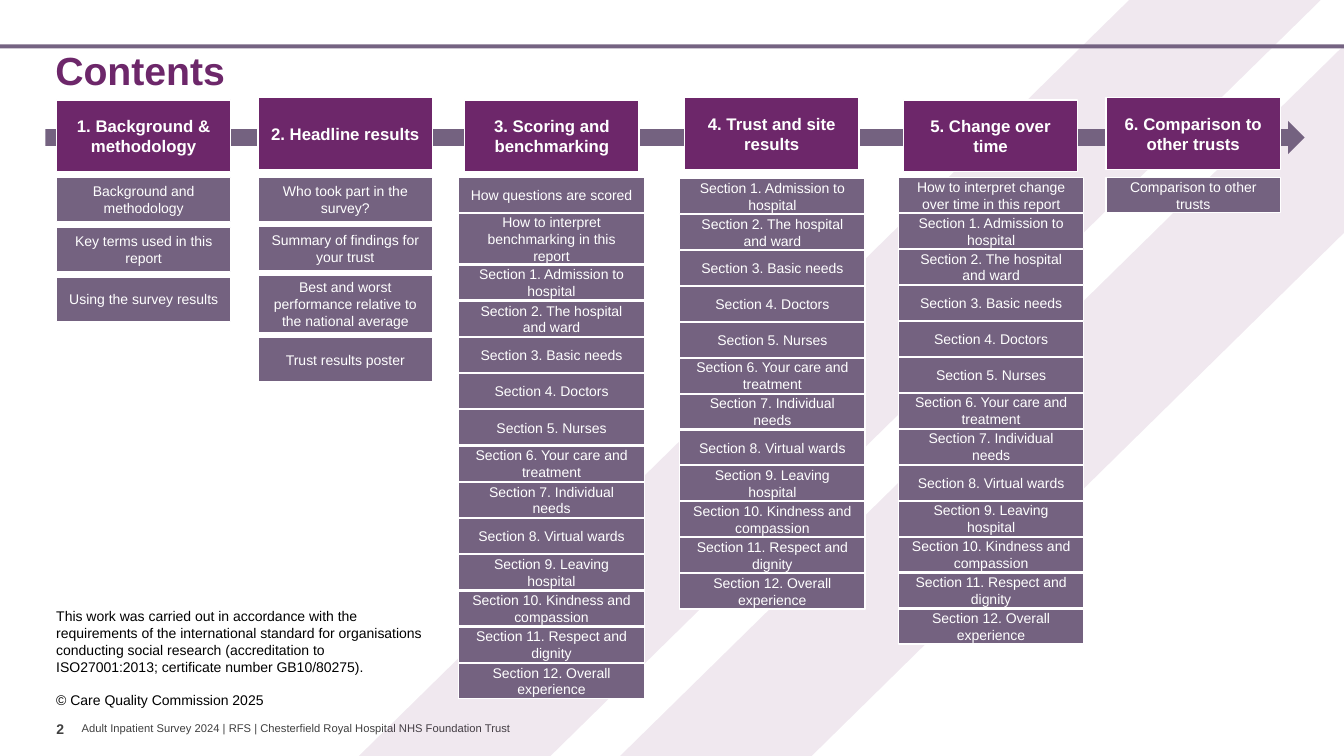
from dataclasses import dataclass

from lxml import etree
from pptx import Presentation
from pptx.dml.color import RGBColor
from pptx.enum.shapes import MSO_SHAPE
from pptx.enum.text import MSO_ANCHOR, PP_ALIGN
from pptx.oxml.ns import qn
from pptx.util import Inches, Pt

RECTANGLE = MSO_SHAPE.RECTANGLE
RIGHT_ARROW = MSO_SHAPE.RIGHT_ARROW
TOP, MIDDLE = MSO_ANCHOR.TOP, MSO_ANCHOR.MIDDLE
LEFT, CENTER = PP_ALIGN.LEFT, PP_ALIGN.CENTER

COLUMNS, ROWS = 133.3, 75
CELL = Inches(0.1)
INSETS = (1, 0.5)


@dataclass(frozen=True)
class Theme:
    font: str = "Arial"
    plum: str = "6D276A"
    mauve: str = "746280"
    rule: str = "756382"
    white: str = "FFFFFF"
    black: str = "000000"
    grey: str = "404040"
    title_size: float = 28
    heading_size: float = 12
    body_size: float = 10
    footer_size: float = 8
    outline: float = 1
    band_opacity: int = 10


def grid(*cells):
    return [round(cell * CELL) for cell in cells]


def write(frame, text, *, font, size, color, bold=False, align=LEFT, anchor=TOP,
          insets=INSETS, wrap=True, line_spacing=None, gap=0):
    frame.word_wrap = wrap
    frame.vertical_anchor = anchor
    frame.margin_left, frame.margin_top = grid(*insets)
    frame.margin_right, frame.margin_bottom = grid(*insets)
    for index, wording in enumerate(text.split("\n")):
        paragraph = frame.add_paragraph() if index else frame.paragraphs[0]
        paragraph.alignment = align
        if line_spacing:
            paragraph.line_spacing = line_spacing
        if index:
            paragraph.space_before = Pt(gap)
        run = paragraph.add_run()
        run.text = wording
        run.font.name = font
        run.font.size = Pt(size)
        run.font.bold = bold
        run.font.color.rgb = RGBColor.from_string(color)


class ContentsSlide:
    def __init__(self, slide, theme):
        self.slide = slide
        self.theme = theme

    def paint(self, shape, color, outlined=False):
        shape.shadow.inherit = False
        shape.fill.solid()
        shape.fill.fore_color.rgb = RGBColor.from_string(color)
        if outlined:
            shape.line.color.rgb = RGBColor.from_string(self.theme.white)
            shape.line.width = Pt(self.theme.outline)
        else:
            shape.line.fill.background()
        return shape

    def block(self, kind, place, color, outlined=False):
        shape = self.slide.shapes.add_shape(kind, *grid(*place))
        return self.paint(shape, color, outlined)

    def band(self, corners):
        start, *others = [grid(*corner) for corner in corners]
        outline = self.slide.shapes.build_freeform(*start)
        outline.add_line_segments(others, close=True)
        band = self.paint(outline.convert_to_shape(), self.theme.plum)
        tint = band.fill._xPr.find(qn("a:solidFill"))[0]
        opacity = etree.SubElement(tint, qn("a:alpha"))
        opacity.set("val", str(self.theme.band_opacity * 1000))

    def label(self, text, place, **style):
        label = self.slide.shapes.add_textbox(*grid(*place))
        write(label.text_frame, text, font=self.theme.font, **style)

    def card(self, text, place, color, size, bold=False):
        card = self.block(RECTANGLE, place, color, outlined=True)
        write(card.text_frame, text, font=self.theme.font, size=size, bold=bold,
              color=self.theme.white, align=CENTER, anchor=MIDDLE)

    def chapter(self, heading, heading_place, entries, left, width, top, bottom,
                height, tall):
        self.card(heading, (*heading_place, 17.3, 7.1), self.theme.plum,
                  self.theme.heading_size, bold=True)
        heights = [tall.get(entry, height) for entry in entries]
        gap = (bottom - top - sum(heights)) / max(len(entries) - 1, 1)
        for entry, entry_height in zip(entries, heights):
            self.card(entry, (left, top, width, entry_height), self.theme.mauve,
                      self.theme.body_size)
            top += entry_height + gap


TOPICS = ["Admission to hospital", "The hospital and ward", "Basic needs", "Doctors",
          "Nurses", "Your care and treatment", "Individual needs", "Virtual wards",
          "Leaving hospital", "Kindness and compassion", "Respect and dignity",
          "Overall experience"]
SECTIONS = [f"Section {number}. {topic}" for number, topic in enumerate(TOPICS, 1)]
BENCHMARKING = "How to interpret benchmarking in this report"
PERFORMANCE = "Best and worst performance relative to the national average"
TALL = {BENCHMARKING: 5, PERFORMANCE: 5.7}

CHAPTERS = [
    ("1. Background & methodology", (5.6, 9.9),
     ["Background and methodology", "Key terms used in this report",
      "Using the survey results"], 5.6, 17.3, 17.6, 31.9, 4.4),
    ("2. Headline results", (25.6, 9.7),
     ["Who took part in the survey?", "Summary of findings for your trust",
      PERFORMANCE, "Trust results poster"], 25.6, 17.3, 17.6, 37.9, 4.4),
    ("3. Scoring and benchmarking", (46.1, 9.9),
     ["How questions are scored", BENCHMARKING, *SECTIONS],
     45.5, 18.4, 17.6, 69.3, 3.5),
    ("4. Trust and site results", (67.9, 9.7), SECTIONS, 67.4, 18.4, 17.7, 60.4, 3.5),
    ("5. Change over time", (89.6, 9.9),
     ["How to interpret change over time in this report", *SECTIONS],
     89.1, 18.4, 17.6, 63.9, 3.5),
    ("6. Comparison to other trusts", (109.7, 9.7),
     ["Comparison to other trusts"], 109.7, 17.3, 17.6, 21.1, 3.5),
]

BANDS = [
    [(112, 0), (131, 0), (54.6, ROWS), (35.6, ROWS)],
    [(COLUMNS, 4.5), (COLUMNS, 23.1), (80.5, ROWS), (61.5, ROWS)],
]

ACCREDITATION = (
    "This work was carried out in accordance with the requirements of the "
    "international standard for organisations conducting social research "
    "(accreditation to ISO27001:2013; certificate number GB10/80275).\n"
    "© Care Quality Commission 2025"
)


def main():
    deck = Presentation()
    deck.slide_width, deck.slide_height = grid(COLUMNS, ROWS)
    theme = Theme()
    contents = ContentsSlide(deck.slides.add_slide(deck.slide_layouts[6]), theme)

    contents.label("Adult Inpatient Survey 2024 | RFS | Chesterfield Royal Hospital "
                   "NHS Foundation Trust", (8.1, 71.6, 61, 1.3),
                   size=theme.footer_size, color=theme.grey, anchor=MIDDLE,
                   insets=(0, 0))
    for corners in BANDS:
        contents.band(corners)
    contents.block(RECTANGLE, (0, 4.4, COLUMNS, 0.4), theme.rule)
    contents.label("2", (5.6, 71, 2.5, 4), size=theme.body_size, color=theme.grey,
                   bold=True, insets=(0, 0.5), wrap=False)
    contents.block(RIGHT_ARROW, (4.5, 12, 124.9, 3.3), theme.mauve)
    contents.label("Contents", (4.5, 4.6, 91.2, 5.3), size=theme.title_size,
                   color=theme.plum, bold=True, anchor=MIDDLE, line_spacing=0.9)
    for chapter in CHAPTERS:
        contents.chapter(*chapter, tall=TALL)
    contents.label(ACCREDITATION, (4.6, 59.8, 38.3, 11.1), size=theme.body_size,
                   color=theme.black, gap=12)
    deck.save("out.pptx")


if __name__ == "__main__":
    main()
